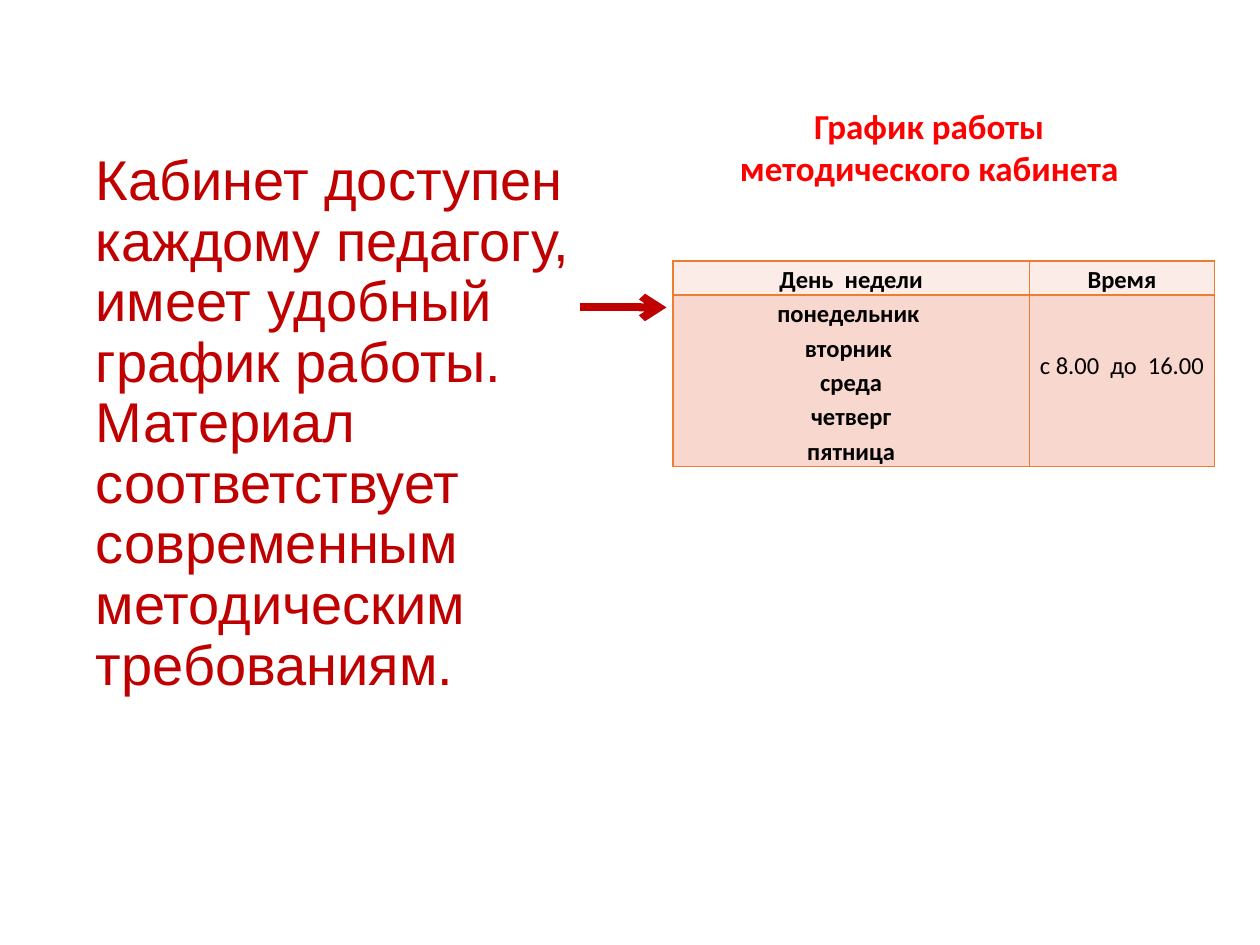
import pptx
import pptx.dml.color
import pptx.enum.shapes
import pptx.enum.text
import pptx.oxml
import pptx.oxml.ns
import pptx.util

Inches = pptx.util.Inches
RGBColor = pptx.dml.color.RGBColor
ALIGN = pptx.enum.text.PP_ALIGN
ANCHOR = pptx.enum.text.MSO_ANCHOR

DARK_RED = RGBColor(0xC0, 0x00, 0x00)
RED = RGBColor(0xFF, 0x00, 0x00)
BLACK = RGBColor(0x00, 0x00, 0x00)
ORANGE = RGBColor(0xED, 0x7D, 0x31)
HEADER_FILL = RGBColor(0xFC, 0xEC, 0xE8)
BODY_FILL = RGBColor(0xF8, 0xD7, 0xCE)

STATEMENT = (
    "Кабинет доступен каждому педагогу, имеет удобный график работы. "
    "Материал соответствует современным методическим требованиям."
)
HEADING = "График работы методического кабинета"
SCHEDULE = [
    ["День  недели", "Время"],
    ["понедельник \nвторник \nсреда\nчетверг\nпятница", "с 8.00  до  16.00"],
]
COLUMN_WIDTHS = [2.83, 1.47]
ROW_HEIGHTS = [0.27, 1.36]
LINE_HEIGHT = 0.27


def drawing_element(tag, **attributes):
    element = pptx.oxml.parse_xml(f"<a:{tag} {pptx.oxml.ns.nsdecls('a')}/>")
    for name, value in attributes.items():
        element.set(name, str(value))
    return element


def write_text(frame, text, *, size, color, font="Calibri", bold=False,
               align=ALIGN.CENTER, spacing=1.0):
    frame.text = text
    for paragraph in frame.paragraphs:
        paragraph.alignment = align
        paragraph.line_spacing = spacing
        paragraph.space_before = pptx.util.Pt(0)
        for run in paragraph.runs:
            run.font.name = font
            run.font.size = pptx.util.Pt(size)
            run.font.bold = bold
            run.font.color.rgb = color


def fill_placeholder(shape, text, left, top, width, height, **text_format):
    shape.left, shape.top = Inches(left), Inches(top)
    shape.width, shape.height = Inches(width), Inches(height)
    frame = shape.text_frame
    frame.word_wrap = True
    frame.auto_size = pptx.enum.text.MSO_AUTO_SIZE.NONE
    frame.vertical_anchor = ANCHOR.TOP
    write_text(frame, text, **text_format)


def remove_bullets(frame):
    for paragraph in frame.paragraphs:
        properties = paragraph._p.get_or_add_pPr()
        properties.set("marL", "0")
        properties.set("indent", "0")
        properties.append(drawing_element("buNone"))


def add_borders(cell):
    properties = cell._tc.get_or_add_tcPr()
    for position, side in enumerate(("lnL", "lnR", "lnT", "lnB")):
        border = drawing_element(side, w=pptx.util.Pt(1))
        fill = drawing_element("solidFill")
        fill.append(drawing_element("srgbClr", val=ORANGE))
        border.append(fill)
        properties.insert(position, border)


def add_schedule(slide):
    table = slide.shapes.add_table(
        len(ROW_HEIGHTS), len(COLUMN_WIDTHS), Inches(5.34), Inches(2.07),
        Inches(sum(COLUMN_WIDTHS)), Inches(sum(ROW_HEIGHTS))).table
    for column, width in zip(table.columns, COLUMN_WIDTHS):
        column.width = Inches(width)
    for row, height in zip(table.rows, ROW_HEIGHTS):
        row.height = Inches(height)
    for row_index, texts in enumerate(SCHEDULE):
        for column_index, text in enumerate(texts):
            cell = table.cell(row_index, column_index)
            is_hours = row_index == 1 and column_index == 1
            cell.margin_left = cell.margin_right = Inches(0.07)
            cell.margin_top = Inches(0)
            cell.margin_bottom = Inches(LINE_HEIGHT if is_hours else 0)
            cell.vertical_anchor = ANCHOR.MIDDLE if is_hours else ANCHOR.TOP
            cell.fill.solid()
            cell.fill.fore_color.rgb = BODY_FILL if row_index else HEADER_FILL
            add_borders(cell)
            write_text(cell.text_frame, text, size=14, color=BLACK,
                       bold=not is_hours, spacing=1.15)


def add_arrow(slide, start, end, y):
    arrow = slide.shapes.add_connector(
        pptx.enum.shapes.MSO_CONNECTOR.STRAIGHT,
        Inches(start), Inches(y), Inches(end), Inches(y))
    arrow.line.color.rgb = DARK_RED
    arrow.line.width = pptx.util.Pt(4.5)
    arrow.line._get_or_add_ln().append(drawing_element("tailEnd", type="arrow"))
    arrow._element.spPr.append(drawing_element("effectLst"))


def main():
    presentation = pptx.Presentation()
    presentation.slide_width = Inches(10)
    presentation.slide_height = Inches(7.5)
    slide = presentation.slides.add_slide(presentation.slide_layouts[1])
    statement = slide.placeholders[1]
    fill_placeholder(statement, STATEMENT, 0.66, 1.16, 4.01, 4.76, size=32,
                     color=DARK_RED, font="Arial", align=ALIGN.LEFT, spacing=0.9)
    remove_bullets(statement.text_frame)
    add_schedule(slide)
    fill_placeholder(slide.shapes.title, HEADING, 5.5, 0.78, 3.75, 1.08,
                     size=20, color=RED, bold=True)
    add_arrow(slide, 4.6, 5.29, 2.44)
    presentation.save("out.pptx")


if __name__ == "__main__":
    main()
